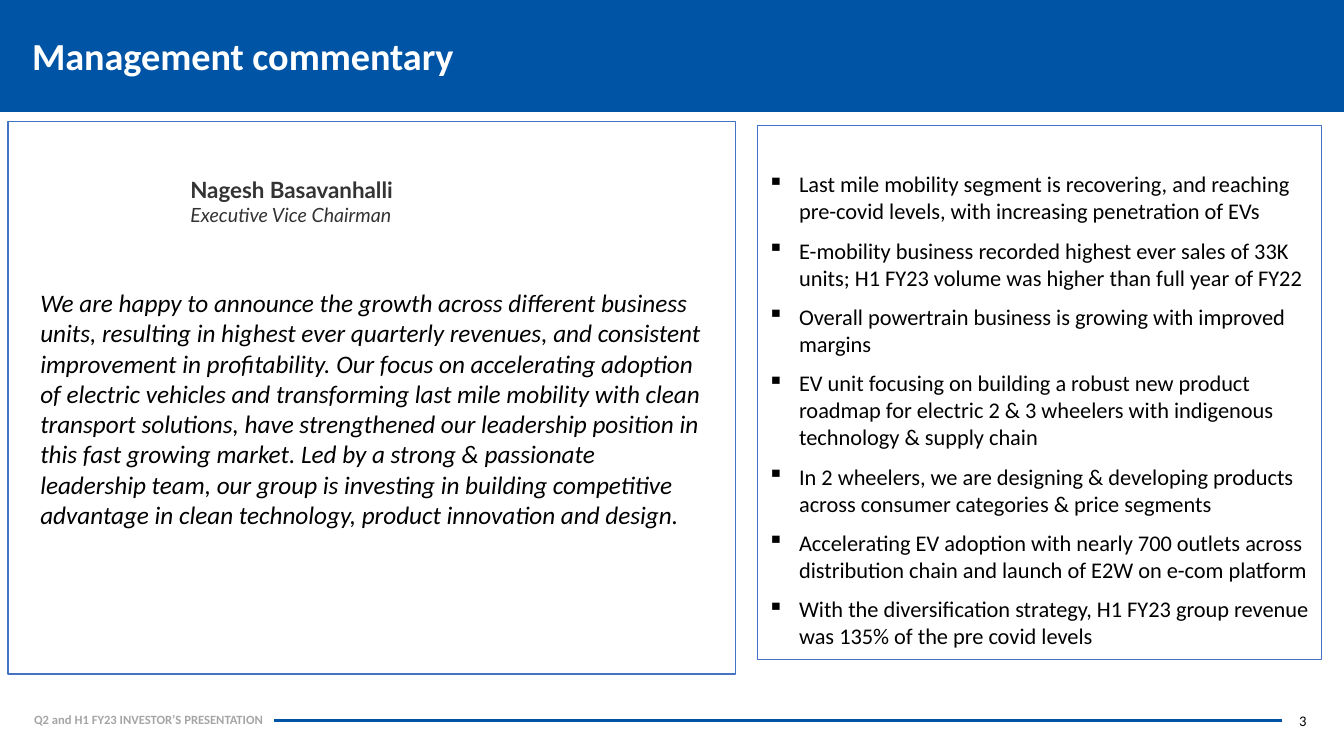
"""Build the management commentary slide of an investor presentation."""
import pptx
import pptx.dml.color
import pptx.enum.shapes
import pptx.enum.text
import pptx.oxml.ns
import pptx.util
from lxml import etree
from dataclasses import dataclass

TITLE = "Management commentary"
SPEAKER = "Nagesh Basavanhalli"
ROLE = "Executive Vice Chairman"
QUOTE = (
    "We are happy to announce the growth across different business units, resulting in "
    "highest ever quarterly revenues, and consistent improvement in profitability. Our focus "
    "on accelerating adoption of electric vehicles and transforming last mile mobility with "
    "clean transport solutions, have strengthened our leadership position in this fast growing "
    "market. Led by a strong & passionate leadership team, our group is investing in building "
    "competitive advantage in clean technology, product innovation and design."
)
HIGHLIGHTS = [
    "Last mile mobility segment is recovering, and reaching pre-covid levels, with increasing penetration of EVs",
    "E-mobility business recorded highest ever sales of 33K units; H1 FY23 volume was higher than full year of FY22",
    "Overall powertrain business is growing with improved margins",
    "EV unit focusing on building a robust new product roadmap for electric 2 & 3 wheelers with indigenous technology & supply chain",
    "In 2 wheelers, we are designing & developing products across consumer categories & price segments",
    "Accelerating EV adoption with nearly 700 outlets across distribution chain and launch of E2W on e-com platform",
    "With the diversification strategy, H1 FY23 group revenue was 135% of the pre covid levels",
]
FOOTER = "Q2 and H1 FY23 INVESTOR’S PRESENTATION"
PAGE = "3"


@dataclass(frozen=True)
class Theme:
    """Colours, fonts and type sizes of the slide."""
    blue: str = "0054A6"
    outline: str = "4472C4"
    white: str = "FFFFFF"
    black: str = "000000"
    dark: str = "333333"
    grey: str = "A5A5A5"
    body: str = "Calibri"
    name: str = "Lato"
    title_size: float = 27.3
    quote_size: float = 18
    text_size: float = 16
    role_size: float = 14
    page_size: float = 10.5
    footer_size: float = 9


THEME = Theme()
Pt = pptx.util.Pt
ALIGN = pptx.enum.text.PP_ALIGN
ANCHOR = pptx.enum.text.MSO_ANCHOR


def rgb(colour):
    """Turn a hex string into a colour."""
    return pptx.dml.color.RGBColor.from_string(colour)


def add_panel(slide, box, fill=None, line=None, weight=1):
    """Add a rectangle with an optional fill and outline."""
    panel = slide.shapes.add_shape(pptx.enum.shapes.MSO_SHAPE.RECTANGLE, *map(Pt, box))
    panel.shadow.inherit = False
    if fill:
        panel.fill.solid()
        panel.fill.fore_color.rgb = rgb(fill)
    else:
        panel.fill.background()
    if line:
        panel.line.color.rgb = rgb(line)
        panel.line.width = Pt(weight)
    else:
        panel.line.fill.background()
    return panel


def add_run(paragraph, text, size, colour, font=THEME.body, bold=False, italic=False):
    """Add one styled run to a paragraph."""
    run = paragraph.add_run()
    run.text = text
    run.font.name, run.font.size = font, Pt(size)
    run.font.bold, run.font.italic = bold, italic
    run.font.color.rgb = rgb(colour)


def add_text(slide, box, anchor=ANCHOR.TOP):
    """Add a wrapping text box and return its text frame."""
    frame = slide.shapes.add_textbox(*map(Pt, box)).text_frame
    frame.word_wrap = True
    frame.vertical_anchor = anchor
    return frame


def add_bullet(paragraph, indent):
    """Give a paragraph a square bullet with a hanging indent."""
    properties = paragraph._p.get_or_add_pPr()
    properties.set("marL", str(Pt(indent)))
    properties.set("indent", str(-Pt(indent)))
    bullet = etree.SubElement(properties, pptx.oxml.ns.qn("a:buChar"))
    bullet.set("char", "▪")


def add_highlights(slide, box):
    """Add the outlined panel with the bulleted highlights."""
    frame = add_panel(slide, box, line=THEME.outline, weight=0.75).text_frame
    frame.word_wrap = True
    frame.vertical_anchor = ANCHOR.TOP
    frame.margin_top = Pt(32)
    for index, highlight in enumerate(HIGHLIGHTS):
        paragraph = frame.add_paragraph() if index else frame.paragraphs[0]
        add_bullet(paragraph, 22.5)
        paragraph.alignment = ALIGN.LEFT
        paragraph.space_before = Pt(6 if index else 0)
        paragraph.space_after = Pt(3)
        add_run(paragraph, highlight, THEME.text_size, THEME.black)


def add_footer(slide):
    """Add the footer label, rule and page number."""
    label = add_text(slide, (17.3, 504.7, 254, 18)).paragraphs[0]
    add_run(label, FOOTER, THEME.footer_size, THEME.grey, bold=True)
    page = add_text(slide, (768, 504.7, 172.3, 20)).paragraphs[0]
    page.alignment = ALIGN.RIGHT
    add_run(page, PAGE, THEME.page_size, THEME.black)
    rule = slide.shapes.add_connector(
        pptx.enum.shapes.MSO_CONNECTOR.STRAIGHT, Pt(195.8), Pt(514.8), Pt(915.8), Pt(514.8))
    rule.line.color.rgb = rgb(THEME.blue)
    rule.line.width = Pt(2.25)
    etree.SubElement(rule._element.spPr, pptx.oxml.ns.qn("a:effectLst"))


def main():
    """Lay out the slide and save it."""
    deck = pptx.Presentation()
    deck.slide_width, deck.slide_height = Pt(960), Pt(540)
    slide = deck.slides.add_slide(deck.slide_layouts[6])

    add_panel(slide, (0, 0, 960, 80), fill=THEME.blue)
    add_footer(slide)
    add_panel(slide, (5.8, 86.7, 519.8, 394.6), fill=THEME.white, line=THEME.outline)

    speaker = add_text(slide, (128.9, 122.4, 321, 44))
    add_run(speaker.paragraphs[0], SPEAKER, THEME.text_size, THEME.dark, THEME.name, bold=True)
    add_run(speaker.add_paragraph(), ROLE, THEME.role_size, THEME.dark, THEME.name, italic=True)

    add_highlights(slide, (541.2, 89.8, 402.6, 381))

    title = add_text(slide, (15.8, 10.8, 783.4, 62), ANCHOR.MIDDLE).paragraphs[0]
    title.line_spacing = 0.9
    add_run(title, TITLE, THEME.title_size, THEME.white, bold=True)

    quote = add_text(slide, (21.7, 201.8, 487.4, 181.4)).paragraphs[0]
    add_run(quote, QUOTE, THEME.quote_size, THEME.black, italic=True)

    deck.save("out.pptx")


if __name__ == "__main__":
    main()
